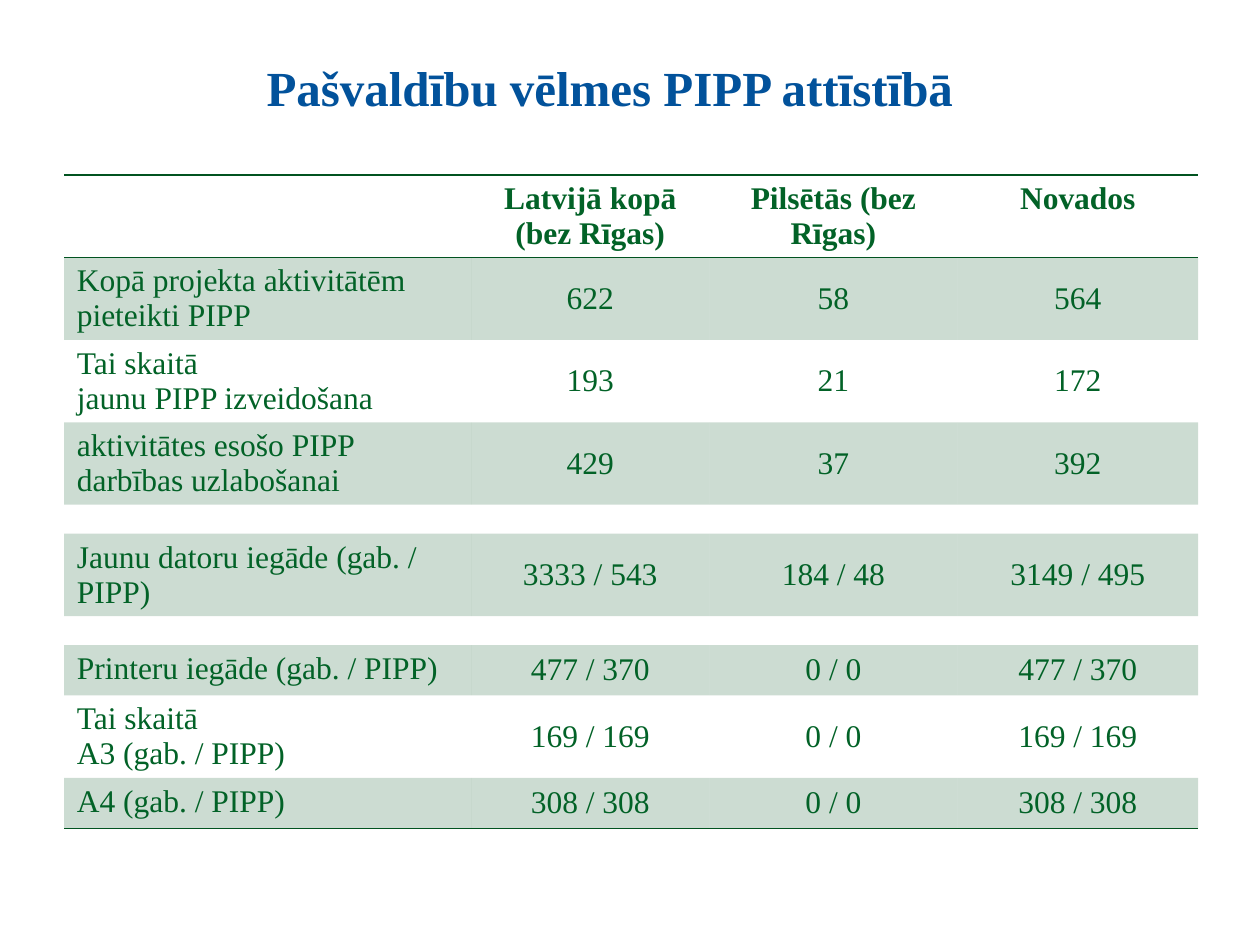
"""Build a slide with a table of municipal wishes for PIPP development."""
from lxml.etree import SubElement
from pptx import Presentation
from pptx.dml.color import RGBColor
from pptx.enum.text import MSO_ANCHOR as Anchor, PP_ALIGN as Align
from pptx.oxml.ns import qn
from pptx.util import Inches, Pt

BLUE = RGBColor(0x02, 0x52, 0x9B)
TEXT_GREEN = RGBColor(0x02, 0x62, 0x27)
LINE_GREEN = RGBColor(0x01, 0x53, 0x20)
PLAIN_STYLE = "{2D5ABB26-0587-4C30-8999-92F81FD0307C}"

COLUMN_WIDTHS = [3.23, 1.89, 1.97, 1.91]
TALL, SINGLE, SPACER = 0.65, 0.4, 0.23
ROWS = [
    (TALL, ["", "Latvijā kopā (bez Rīgas)", "Pilsētās (bez Rīgas)", "Novados"]),
    (TALL, ["Kopā projekta aktivitātēm pieteikti PIPP", "622", "58", "564"]),
    (TALL, ["Tai skaitā\njaunu PIPP izveidošana", "193", "21", "172"]),
    (TALL, ["aktivitātes esošo PIPP darbības uzlabošanai", "429", "37", "392"]),
    (SPACER, [""] * 4),
    (TALL, ["Jaunu datoru iegāde (gab. / PIPP)", "3333 / 543", "184 / 48", "3149 / 495"]),
    (SPACER, [""] * 4),
    (SINGLE, ["Printeru iegāde (gab. / PIPP)", "477 / 370", "0 / 0", "477 / 370"]),
    (TALL, ["Tai skaitā\nA3 (gab. / PIPP)", "169 / 169", "0 / 0", "169 / 169"]),
    (SINGLE, ["A4 (gab. / PIPP)", "308 / 308", "0 / 0", "308 / 308"]),
]


class SlideBuilder:
    """Hold the style and the current slide."""

    font_name = "Times New Roman"

    def __init__(self, presentation):
        """Add a title-only slide."""
        self.slide = presentation.slides.add_slide(presentation.slide_layouts[5])

    def style(self, paragraph, size, color, bold, alignment):
        """Format one paragraph."""
        paragraph.alignment = alignment
        font = paragraph.font
        font.name, font.size, font.bold = self.font_name, Pt(size), bold
        font.color.rgb = color

    def title(self, text, left, top, width, height):
        """Place and fill the title placeholder."""
        shape = self.slide.shapes.title
        shape.left, shape.top = Inches(left), Inches(top)
        shape.width, shape.height = Inches(width), Inches(height)
        frame = shape.text_frame
        frame.text = text
        frame.vertical_anchor = Anchor.MIDDLE
        self.style(frame.paragraphs[0], 28, BLUE, True, Align.CENTER)

    def border(self, cell, tag):
        """Draw one green edge of a cell."""
        line = SubElement(cell._tc.get_or_add_tcPr(), qn(tag), w=str(Pt(1)))
        fill = SubElement(line, qn("a:solidFill"))
        SubElement(fill, qn("a:srgbClr"), val=str(LINE_GREEN))

    def tint(self, cell):
        """Fill a cell with translucent green."""
        cell.fill.solid()
        cell.fill.fore_color.rgb = LINE_GREEN
        color = cell._tc.tcPr.find(".//" + qn("a:solidFill") + "/" + qn("a:srgbClr"))
        for color in cell._tc.tcPr.findall(qn("a:solidFill") + "/" + qn("a:srgbClr")):
            SubElement(color, qn("a:alpha"), val="20000")

    def cell(self, cell, text, row, column, height):
        """Write and format one table cell."""
        header, last = row == 0, row == len(ROWS) - 1
        cell.text = text
        cell.vertical_anchor = Anchor.TOP if header or column == 0 else Anchor.MIDDLE
        size = 8 if height == SPACER else 18
        alignment = Align.CENTER if column else Align.LEFT
        for paragraph in cell.text_frame.paragraphs:
            self.style(paragraph, size, TEXT_GREEN, header, alignment)
            if not text:
                SubElement(paragraph._p, qn("a:endParaRPr"), sz=str(size * 100))
        if header:
            self.border(cell, "a:lnT")
        if header or last:
            self.border(cell, "a:lnB")
        if row % 2:
            self.tint(cell)
        else:
            cell.fill.background()

    def table(self, rows, widths, left, top):
        """Add the table with its column widths and row heights."""
        height = sum(row_height for row_height, _ in rows)
        table = self.slide.shapes.add_table(
            len(rows), len(widths), Inches(left), Inches(top),
            Inches(sum(widths)), Inches(height)).table
        table._tbl.tblPr.find(qn("a:tableStyleId")).text = PLAIN_STYLE
        table.horz_banding = False
        for column, width in zip(table.columns, widths):
            column.width = Inches(width)
        for row, (row_height, texts) in enumerate(rows):
            table.rows[row].height = Inches(row_height)
            for column, text in enumerate(texts):
                self.cell(table.cell(row, column), text, row, column, row_height)


def main():
    """Build and save the presentation."""
    presentation = Presentation()
    presentation.slide_width, presentation.slide_height = Inches(10), Inches(7.5)
    builder = SlideBuilder(presentation)
    builder.table(ROWS, COLUMN_WIDTHS, 0.51, 1.39)
    builder.title("Pašvaldību vēlmes PIPP attīstībā", 0.51, 0.13, 8.66, 1.12)
    presentation.save("out.pptx")


if __name__ == "__main__":
    main()
